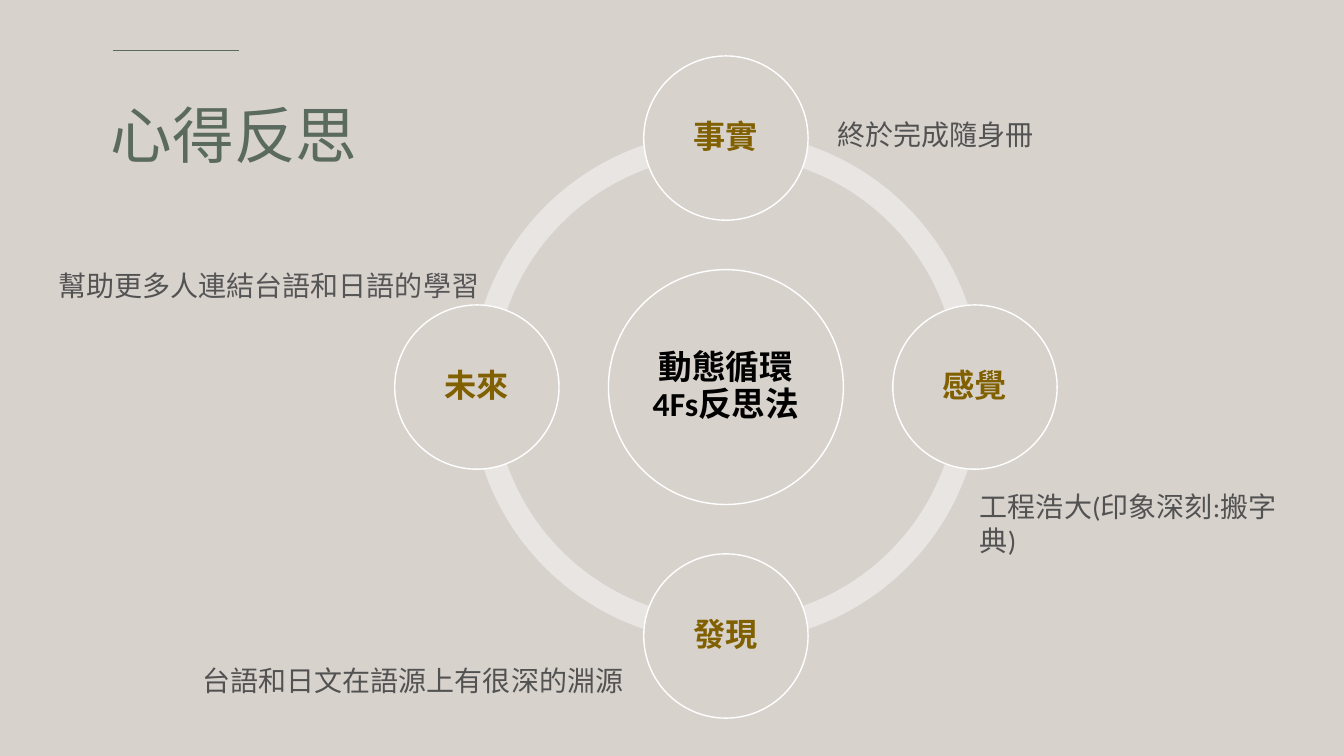
from lxml import etree
from pptx import Presentation
from pptx import util as u
from pptx.dml.color import RGBColor
from pptx.enum import shapes, text
from pptx.oxml.ns import qn

# Content
TITLE = "心得反思"
HUB = "動態循環4Fs反思法"
# Stage name, direction from the hub (x, y)
STAGES = [
    ("事實", (0, -1)),
    ("感覺", (1, 0)),
    ("發現", (0, 1)),
    ("未來", (-1, 0)),
]
# Runs (text, colour), box (left, top, width, height), wrap
NOTES = [
    ([("終於完成隨身冊", "525252")], (821, 112, 242, 74), True),
    ([("工程浩大(印象深刻:搬字典)", "525252")], (962, 481, 349, 74), True),
    ([("台語和日文在語源上有很深的淵源", "525252")], (191, 653, 441, 44), False),
    ([("幫助更多人", "525252"), ("連結台語和日語的學習", "565656")],
     (48, 261, 441, 44), False),
]

# Style
LATIN, CJK = "Calibri", "Noto Sans CJK TC"
PAPER, GREEN, RING, WHITE = "D8D2CD", "5B6A5E", "E9E5E3", "FFFFFF"
BLACK, GOLD = "000000", "806000"

# Layout, 100 px to the inch
PX = 9144
CENTER_X, CENTER_Y = 720, 384
RING_SIZE, HUB_SIZE, STAGE_SIZE, ORBIT = 507, 233, 163, 247
QUARTER = 54  # 90 degrees in adjustment units
RING_WIDTH = 0.046


def colour(value):
    return RGBColor.from_string(value)


def emu(*lengths):
    return [u.Emu(round(length * PX)) for length in lengths]


def square(x, y, size):
    return emu(x - size / 2, y - size / 2, size, size)


def write(paragraph, words, size, color, bold=False, font=LATIN,
          align=text.PP_ALIGN.LEFT, spacing=None):
    paragraph.alignment = align
    if spacing:
        paragraph.line_spacing = spacing
    run = paragraph.add_run()
    run.text = words
    run.font.size = u.Pt(size)
    run.font.bold = bold
    run.font.name = font
    run.font.color.rgb = colour(color)
    etree.SubElement(run.font._element, qn("a:ea"), typeface=CJK)


def add_circle(slide, x, y, size, words, font_size, color):
    circle = slide.shapes.add_shape(shapes.MSO_SHAPE.OVAL, *square(x, y, size))
    circle.shadow.inherit = False
    circle.fill.solid()
    circle.fill.fore_color.rgb = colour(PAPER)
    circle.line.color.rgb = colour(WHITE)
    circle.line.width = u.Pt(1)
    frame = circle.text_frame
    frame.word_wrap = True
    frame.vertical_anchor = text.MSO_ANCHOR.MIDDLE
    frame.margin_left = frame.margin_right = u.Inches(0.03)
    frame.margin_top = frame.margin_bottom = u.Inches(0.03)
    write(frame.paragraphs[0], words, font_size, color, bold=True,
          align=text.PP_ALIGN.CENTER, spacing=0.9)


def main():
    presentation = Presentation()
    presentation.slide_width, presentation.slide_height = u.Inches(13.33), u.Inches(7.5)
    slide = presentation.slides.add_slide(presentation.slide_layouts[5])
    slide.background.fill.solid()
    slide.background.fill.fore_color.rgb = colour(PAPER)

    # Rule and title
    rule = slide.shapes.add_connector(
        shapes.MSO_CONNECTOR.STRAIGHT, *emu(112, 50, 237, 50))
    rule.line.color.rgb = colour(GREEN)
    rule.line.width = u.Pt(1.25)
    etree.SubElement(rule._element.spPr, qn("a:effectLst"))
    title = slide.shapes.title
    title.left, title.top, title.width, title.height = emu(100, 96, 567, 83)
    title.text_frame.vertical_anchor = text.MSO_ANCHOR.MIDDLE
    write(title.text_frame.paragraphs[0], TITLE, 44, GREEN, font=CJK, spacing=0.9)

    # Ring of quarter arcs
    for index in range(len(STAGES)):
        arc = slide.shapes.add_shape(
            shapes.MSO_SHAPE.BLOCK_ARC, *square(CENTER_X, CENTER_Y, RING_SIZE))
        arc.shadow.inherit = False
        arc.adjustments[0] = QUARTER * index
        arc.adjustments[1] = QUARTER * ((index + 1) % len(STAGES))
        arc.adjustments[2] = RING_WIDTH
        arc.fill.solid()
        arc.fill.fore_color.rgb = colour(RING)
        arc.line.fill.background()

    # Hub and stages
    add_circle(slide, CENTER_X, CENTER_Y, HUB_SIZE, HUB, 24, BLACK)
    for name, (across, down) in STAGES:
        add_circle(slide, CENTER_X + ORBIT * across, CENTER_Y + ORBIT * down,
                   STAGE_SIZE, name, 23, GOLD)

    # Notes beside the stages
    for runs, box, wrap in NOTES:
        frame = slide.shapes.add_textbox(*emu(*box)).text_frame
        frame.word_wrap = wrap
        frame.auto_size = text.MSO_AUTO_SIZE.SHAPE_TO_FIT_TEXT
        for words, color in runs:
            write(frame.paragraphs[0], words, 20, color)

    presentation.save("out.pptx")


if __name__ == "__main__":
    main()
